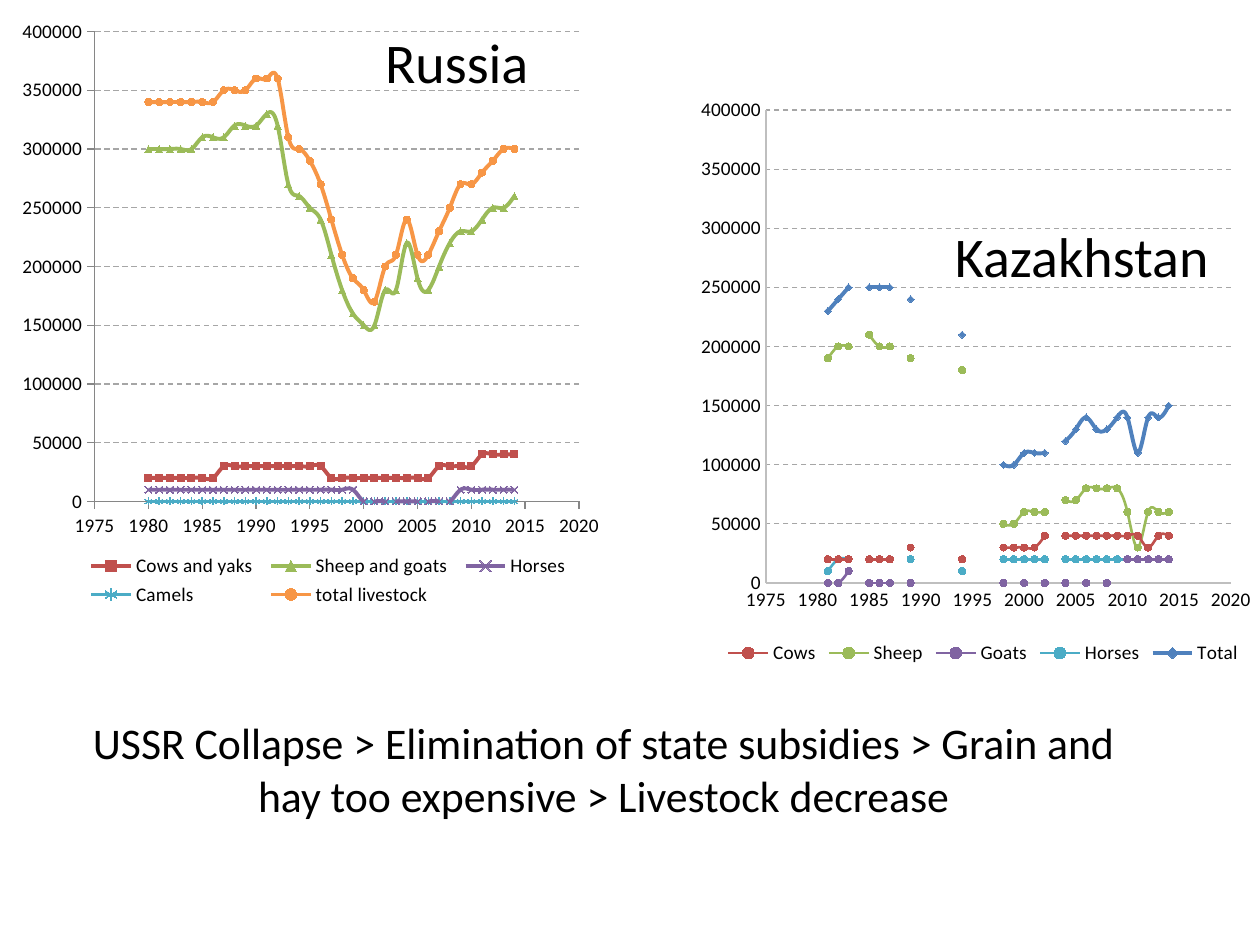
from lxml import etree
from pptx import Presentation
from pptx.chart.data import XyChartData
from pptx.dml.color import RGBColor
from pptx.enum.chart import (XL_CHART_TYPE, XL_LEGEND_POSITION, XL_MARKER_STYLE,
                             XL_TICK_LABEL_POSITION, XL_TICK_MARK)
from pptx.enum.dml import MSO_LINE
from pptx.enum.text import MSO_ANCHOR, PP_ALIGN
from pptx.oxml.ns import qn
from pptx.util import Cm, Pt

SMOOTH = XL_CHART_TYPE.XY_SCATTER_SMOOTH
BOTTOM = XL_LEGEND_POSITION.BOTTOM
NEXT_TO = XL_TICK_LABEL_POSITION.NEXT_TO_AXIS
OUT, NO_TICK = XL_TICK_MARK.OUTSIDE, XL_TICK_MARK.NONE
SQUARE, TRIANGLE = XL_MARKER_STYLE.SQUARE, XL_MARKER_STYLE.TRIANGLE
CROSS, STAR = XL_MARKER_STYLE.X, XL_MARKER_STYLE.STAR
CIRCLE, DIAMOND = XL_MARKER_STYLE.CIRCLE, XL_MARKER_STYLE.DIAMOND
DASH = MSO_LINE.DASH
MIDDLE, CENTER = MSO_ANCHOR.MIDDLE, PP_ALIGN.CENTER

BLACK = RGBColor(0x00, 0x00, 0x00)
GRID = RGBColor(0xA6, 0xA6, 0xA6)
DARK_AXIS = RGBColor(0x86, 0x86, 0x86)
LIGHT_AXIS = RGBColor(0xBF, 0xBF, 0xBF)
RED = RGBColor(0xC0, 0x50, 0x4D)
GREEN = RGBColor(0x9B, 0xBB, 0x59)
PURPLE = RGBColor(0x80, 0x64, 0xA2)
TEAL = RGBColor(0x4B, 0xAC, 0xC6)
ORANGE = RGBColor(0xF7, 0x96, 0x46)
BLUE = RGBColor(0x4F, 0x81, 0xBD)
FONT = "Calibri"

YEARS = range(1980, 2015)
KAZAKH_YEARS = [1981, 1982, 1983, 1985, 1986, 1987, 1989, 1994,
                *range(1998, 2003), *range(2004, 2015)]

# Series: name, colour, marker, line width in points, tens of thousands of head
RUSSIA = [
    ("Cows and yaks", RED, SQUARE, 2.25,
     [2] * 7 + [3] * 10 + [2] * 10 + [3] * 4 + [4] * 4),
    ("Sheep and goats", GREEN, TRIANGLE, 2.25,
     [30, 30, 30, 30, 30, 31, 31, 31, 32, 32, 32, 33, 32, 27, 26, 25, 24, 21,
      18, 16, 15, 15, 18, 18, 22, 19, 18, 20, 22, 23, 23, 24, 25, 25, 26]),
    ("Horses", PURPLE, CROSS, 2.25, [1] * 20 + [0] * 9 + [1] * 6),
    ("Camels", TEAL, STAR, 2.25, [0] * 35),
    ("total livestock", ORANGE, CIRCLE, 2.25,
     [34, 34, 34, 34, 34, 34, 34, 35, 35, 35, 36, 36, 36, 31, 30, 29, 27, 24,
      21, 19, 18, 17, 20, 21, 24, 21, 21, 23, 25, 27, 27, 28, 29, 30, 30]),
]
KAZAKHSTAN = [
    ("Cows", RED, CIRCLE, 1.5,
     [2, 2, 2, 2, 2, 2, 3, 2, 3, 3, 3, 3, 4, 4, 4, 4, 4, 4, 4, 4, 4, 3, 4, 4]),
    ("Sheep", GREEN, CIRCLE, 1.5,
     [19, 20, 20, 21, 20, 20, 19, 18, 5, 5, 6, 6, 6,
      7, 7, 8, 8, 8, 8, 6, 3, 6, 6, 6]),
    ("Goats", PURPLE, CIRCLE, 1.5,
     [0, 0, 1, 0, 0, 0, 0, None, 0, None, 0, None, 0,
      0, None, 0, None, 0, None, 2, 2, 2, 2, 2]),
    ("Horses", TEAL, CIRCLE, 1.5, [1] + [2] * 6 + [1] + [2] * 16),
    ("Total", BLUE, DIAMOND, 2.25,
     [23, 24, 25, 25, 25, 25, 24, 21, 10, 10, 11, 11, 11,
      12, 13, 14, 13, 13, 14, 14, 11, 14, 14, 15]),
]


def add_label(slide, text, size, box):
    sp = slide.shapes.add_textbox(*(Cm(v) for v in box))
    tf = sp.text_frame
    tf.word_wrap = True
    tf.vertical_anchor = MIDDLE
    p = tf.paragraphs[0]
    p.alignment = CENTER
    r = p.add_run()
    r.text = text
    r.font.name, r.font.size = FONT, Pt(size)
    r.font.color.rgb = BLACK


def add_livestock_chart(slide, series, years, box, plot, legend, axis_color, tick):
    """Years with no value stay as gaps; plot and legend are x, y, w, h in percent."""
    data = XyChartData()
    for name, _, _, _, counts in series:
        by_year = dict(zip(years, counts))
        points = data.add_series(name)
        for year in YEARS:
            value = by_year.get(year)
            points.add_data_point(year, None if value is None else value * 10000)
    chart = slide.shapes.add_chart(SMOOTH, *(Cm(v) for v in box), data).chart
    chart.has_title = False
    chart.font.name, chart.font.size = FONT, Pt(11)
    chart.font.color.rgb = BLACK
    chart.has_legend = True
    chart.legend.position = BOTTOM
    chart.legend.include_in_layout = False

    for s, (_, color, marker, width, _) in zip(chart.plots[0].series, series):
        s.format.line.color.rgb = color
        s.format.line.width = Pt(width)
        s.marker.style, s.marker.size = marker, 4
        s.marker.format.fill.solid()
        s.marker.format.fill.fore_color.rgb = color
        s.marker.format.line.color.rgb = color

    for axis, low, high, step in ((chart.category_axis, 1975, 2020, 5),
                                  (chart.value_axis, 0, 400000, 50000)):
        settings = {"minimum_scale": low, "maximum_scale": high, "major_unit": step,
                    "major_tick_mark": tick, "minor_tick_mark": NO_TICK,
                    "tick_label_position": NEXT_TO, "has_major_gridlines": False}
        for key, value in settings.items():
            setattr(axis, key, value)
        axis.tick_labels.number_format = "General"
        axis.tick_labels.number_format_is_linked = False
        axis.format.line.color.rgb = axis_color
        axis.format.line.width = Pt(0.75)
    grid = chart.value_axis.major_gridlines.format.line
    grid.color.rgb, grid.width, grid.dash_style = GRID, Pt(0.75), DASH

    root = chart.element
    for smooth in root.iter(qn("c:smooth")):
        smooth.set("val", "1")
    for pt in list(root.iter(qn("c:pt"))):
        if pt.findtext(qn("c:v")) == "None":
            pt.getparent().remove(pt)
    for parent_tag, index, target, shares in (
            ("c:plotArea", 0, [("layoutTarget", "inner")], plot),
            ("c:legend", 1, [], legend)):
        parent = next(root.iter(qn(parent_tag)))
        for old in parent.findall(qn("c:layout")):
            parent.remove(old)
        layout = etree.Element(qn("c:layout"))
        parent.insert(index, layout)
        manual = etree.SubElement(layout, qn("c:manualLayout"))
        for tag, value in (*target, ("xMode", "edge"), ("yMode", "edge"),
                           *zip("xywh", (v / 100 for v in shares))):
            etree.SubElement(manual, qn("c:" + tag)).set("val", str(value))


prs = Presentation()
prs.slide_width, prs.slide_height = Cm(25.4), Cm(19.05)
slide = prs.slides.add_slide(prs.slide_layouts[6])

add_label(slide, "Russia", 32, (6.35, 0.13, 5.72, 2.21))
add_livestock_chart(slide, RUSSIA, YEARS, (-0.43, 0.2, 12.7, 12.5),
                    (18.4, 3.5, 76.9, 75.8), (16, 87, 79, 10), DARK_AXIS, OUT)
add_livestock_chart(slide, KAZAKHSTAN, KAZAKH_YEARS, (12.9, 1.98, 12.7, 12.5),
                    (20, 1.9, 73.8, 76.3), (13, 87, 83, 5), LIGHT_AXIS, NO_TICK)
add_label(slide, "Kazakhstan", 32, (18.42, 3.94, 6.78, 2.41))
add_label(slide, "USSR Collapse > Elimination of state subsidies > Grain and hay too "
          "expensive > Livestock decrease", 25, (1.27, 14.3, 21.79, 2.39))

prs.save("out.pptx")
